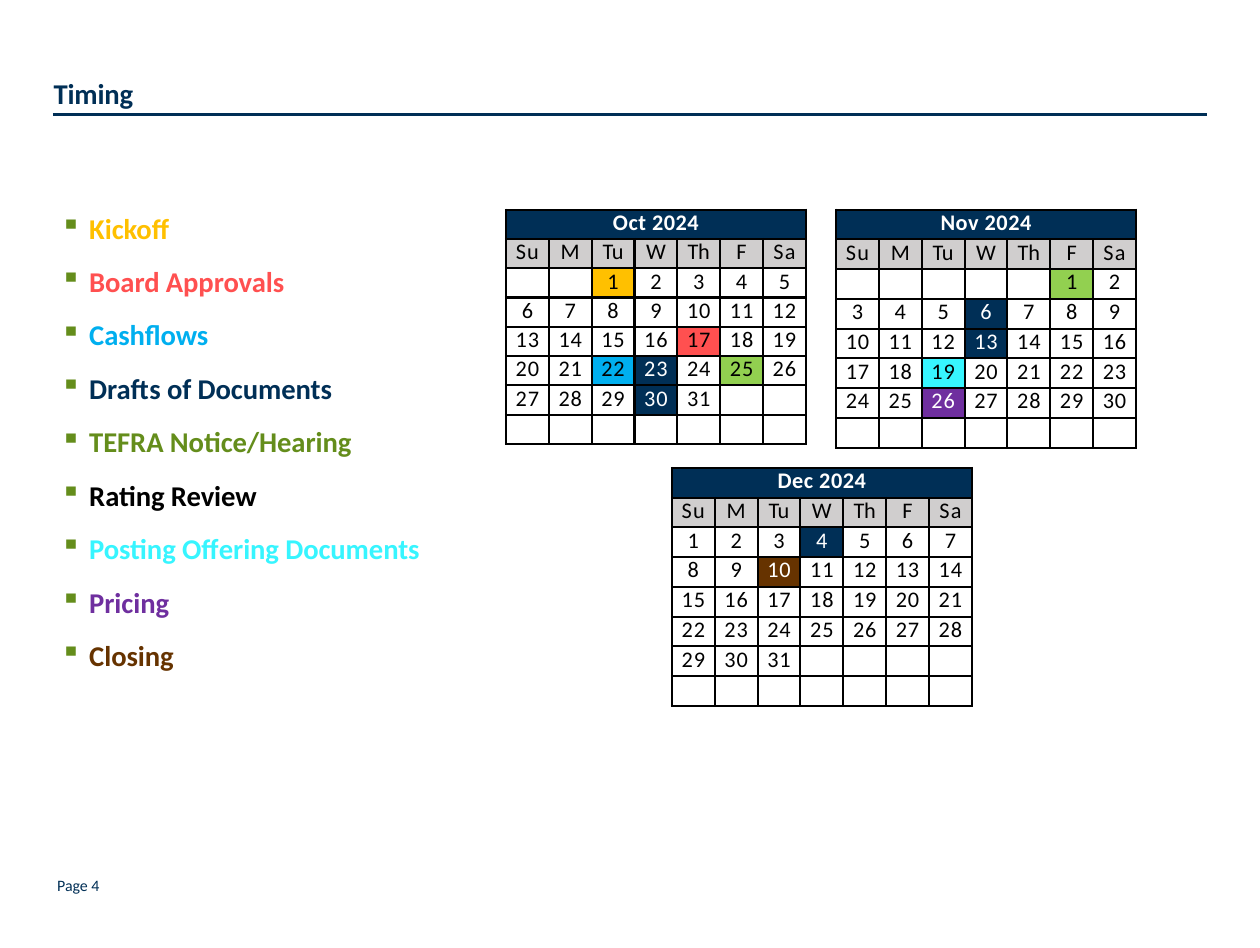
import pptx
import pptx.dml.color
import pptx.enum.shapes
import pptx.enum.text
import pptx.oxml
import pptx.oxml.ns
import pptx.util
from pptx.dml.color import RGBColor
from pptx.util import Cm, Pt

NAVY = RGBColor(0x00, 0x2F, 0x56)
BLACK = RGBColor(0x00, 0x00, 0x00)
WHITE = RGBColor(0xFF, 0xFF, 0xFF)
GREY = RGBColor(0xD0, 0xCE, 0xCE)
AMBER = RGBColor(0xFF, 0xC0, 0x00)
RED = RGBColor(0xFF, 0x50, 0x50)
BLUE = RGBColor(0x00, 0xAF, 0xEF)
OLIVE = RGBColor(0x64, 0x8D, 0x1B)
GREEN = RGBColor(0x92, 0xD0, 0x50)
CYAN = RGBColor(0x37, 0xF5, 0xFF)
PURPLE = RGBColor(0x6F, 0x2F, 0x9F)
BROWN = RGBColor(0x66, 0x33, 0x00)

DARK_FILLS = (NAVY, PURPLE, BROWN)
CENTER = pptx.enum.text.PP_ALIGN.CENTER
NS = pptx.oxml.ns.nsdecls("a")

MILESTONES = [
    ("Kickoff", AMBER),
    ("Board Approvals", RED),
    ("Cashflows", BLUE),
    ("Drafts of Documents", NAVY),
    ("TEFRA Notice/Hearing", OLIVE),
    ("Rating Review", BLACK),
    ("Posting Offering Documents", CYAN),
    ("Pricing", PURPLE),
    ("Closing", BROWN),
]
# Weekday names with their letter spacing in points
WEEKDAYS = [("Su", 0.8), ("M", -0.5), ("Tu", -0.2), ("W", -0.5),
            ("Th", -0.2), ("F", -0.5), ("Sa", 0.8)]


def xml(text):
    return pptx.oxml.parse_xml(text)


def add_text(p, text, size=14, color=BLACK, bold=False, spacing=0, align=None):
    r = p.add_run()
    r.text = text
    r.font.name = "Calibri"
    r.font.size = Pt(size)
    r.font.bold = bold
    r.font.color.rgb = color
    if spacing:
        r._r.get_or_add_rPr().set("spc", str(round(spacing * 100)))
    if align is not None:
        p.alignment = align


def add_box(slide, left, top, width, height):
    tf = slide.shapes.add_textbox(left, top, width, height).text_frame
    tf.word_wrap = True
    tf.margin_left = tf.margin_top = tf.margin_right = tf.margin_bottom = 0
    return tf


def add_title(slide, left, top, width, text):
    tf = add_box(slide, left + Cm(0.02), top, Cm(8.2), Cm(0.78))
    add_text(tf.paragraphs[0], text, size=18, color=NAVY, bold=True, spacing=-0.1)
    y = top + Cm(0.86)
    rule = slide.shapes.add_connector(
        pptx.enum.shapes.MSO_CONNECTOR.STRAIGHT, left, y, left + width, y)
    rule.line.color.rgb = NAVY
    rule.line.width = Pt(2.25)
    rule._element.spPr.append(xml(f"<a:effectLst {NS}/>"))


def add_milestones(slide, left, top, width, height):
    tf = add_box(slide, left, top, width, height)
    for i, (text, color) in enumerate(MILESTONES):
        p = tf.paragraphs[0] if i == 0 else tf.add_paragraph()
        pPr = p._p.get_or_add_pPr()
        pPr.set("marL", str(Cm(0.83)))
        pPr.set("indent", str(-Cm(0.64)))
        pPr.append(xml(f'<a:buClr {NS}><a:srgbClr val="{OLIVE}"/></a:buClr>'))
        pPr.append(xml(f'<a:buChar {NS} char="▪"/>'))
        if i:
            p.space_before = Pt(12)
        add_text(p, text, size=18, color=color, bold=True, spacing=-0.05)


def format_cell(cell, fill):
    cell.margin_left = cell.margin_top = cell.margin_right = cell.margin_bottom = 0
    if fill is None:
        cell.fill.background()
    else:
        cell.fill.solid()
        cell.fill.fore_color.rgb = fill
    tcPr = cell._tc.get_or_add_tcPr()
    for i, side in enumerate(("lnL", "lnR", "lnT", "lnB")):
        tcPr.insert(i, xml(
            f'<a:{side} {NS} w="{Pt(1.5)}"><a:solidFill><a:srgbClr val="{BLACK}"/>'
            f'</a:solidFill></a:{side}>'))


def fill_cell(cell, text, fill=None, **fmt):
    format_cell(cell, fill)
    p = cell.text_frame.paragraphs[0]
    p.line_spacing = Pt(16.8)
    if text:
        add_text(p, text, align=CENTER, **fmt)
    else:
        p._p.append(xml(f'<a:endParaRPr {NS} sz="1400"/>'))


def add_calendar(slide, left, top, col_width, row_height, month,
                 first_weekday, days, marks):
    """Draw a month; marks maps a day to its fill, weekdays count from Sunday."""
    cols, rows = len(WEEKDAYS), 8
    table = slide.shapes.add_table(
        rows, cols, left, top, col_width * cols, row_height * rows).table
    table.first_row = table.horz_banding = False
    for col in table.columns:
        col.width = col_width
    for row in table.rows:
        row.height = row_height

    for c, (name, spacing) in enumerate(WEEKDAYS):
        fill_cell(table.cell(0, c), month if c == 0 else "", NAVY,
                  color=WHITE, bold=True, spacing=0.3)
        fill_cell(table.cell(1, c), name, GREY, spacing=spacing)
    table.cell(0, 0).merge(table.cell(0, cols - 1))

    for i in range((rows - 2) * cols):
        day = i - first_weekday + 1
        fill = marks.get(day)
        fill_cell(table.cell(2 + i // cols, i % cols),
                  str(day) if 1 <= day <= days else "", fill,
                  color=WHITE if fill in DARK_FILLS else BLACK, spacing=0.5)


def add_page_number(slide, left, top, number):
    tf = add_box(slide, left, top, Cm(1.4), Cm(0.43))
    tf.paragraphs[0].line_spacing = Pt(10.6)
    add_text(tf.paragraphs[0], f"Page {number}", size=10, color=NAVY)


def main():
    prs = pptx.Presentation()
    prs.slide_width, prs.slide_height = Cm(27.94), Cm(21.03)
    slide = prs.slides.add_slide(prs.slide_layouts[6])

    add_title(slide, Cm(1.17), Cm(1.68), Cm(25.6), "Timing")
    add_milestones(slide, Cm(1.15), Cm(4.67), Cm(8.5), Cm(10.3))
    add_calendar(slide, Cm(11.22), Cm(4.65), Cm(0.95), Cm(0.65), "Oct 2024", 2, 31,
                 {1: AMBER, 17: RED, 22: BLUE, 23: NAVY, 25: GREEN, 30: NAVY})
    add_calendar(slide, Cm(18.54), Cm(4.65), Cm(0.95), Cm(0.66), "Nov 2024", 5, 30,
                 {1: GREEN, 6: NAVY, 13: NAVY, 19: CYAN, 26: PURPLE})
    add_calendar(slide, Cm(14.9), Cm(10.38), Cm(0.95), Cm(0.66), "Dec 2024", 0, 31,
                 {4: NAVY, 10: BROWN})
    add_page_number(slide, Cm(1.27), Cm(19.48), 4)
    prs.save("out.pptx")


if __name__ == "__main__":
    main()
